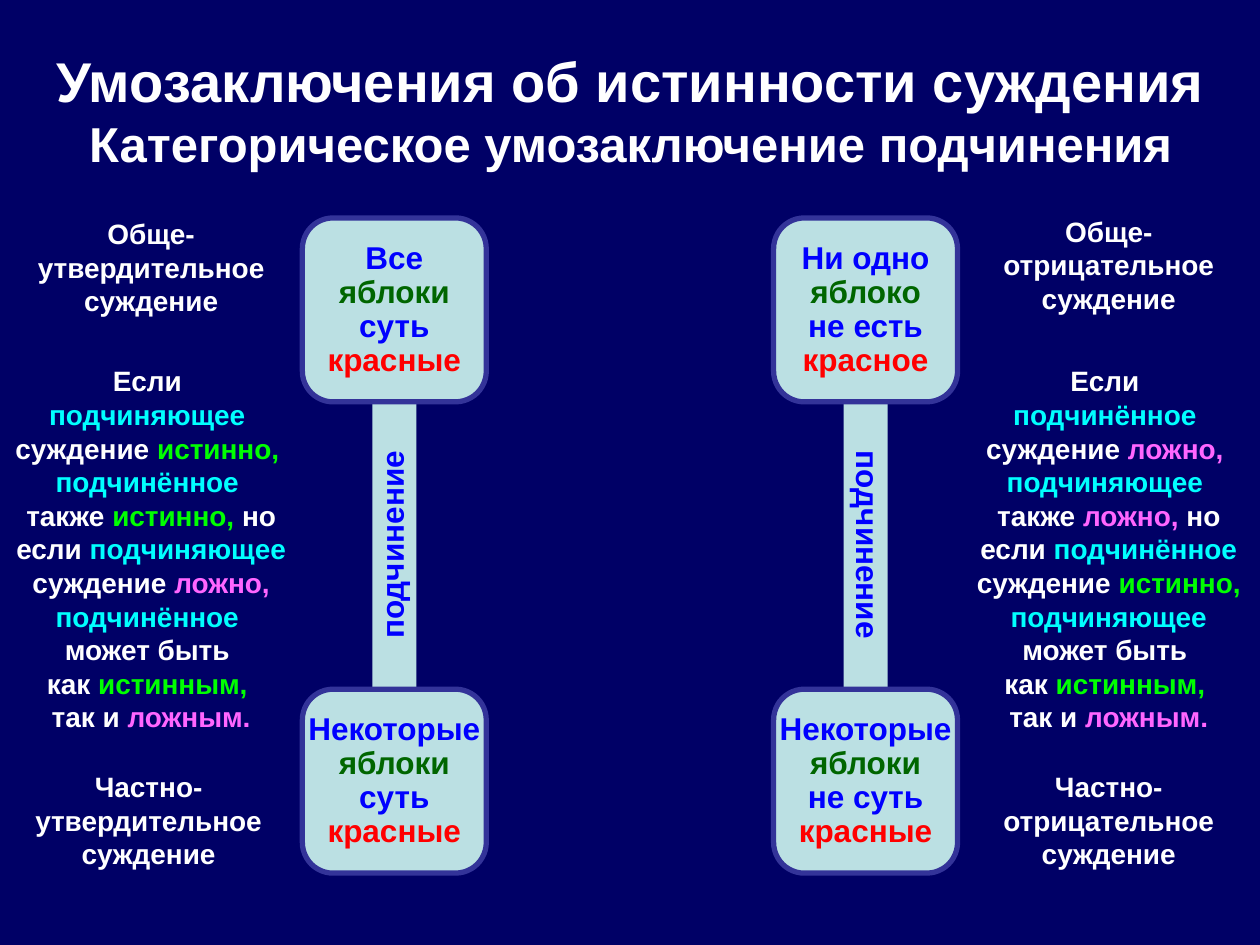
from pptx import Presentation
from pptx.dml.color import RGBColor
from pptx.enum.shapes import MSO_SHAPE as SHAPE
from pptx.enum.text import MSO_ANCHOR as ANCHOR, PP_ALIGN as ALIGN
from pptx.util import Inches, Pt

COLORS = {
    "navy": "000066", "white": "FFFFFF", "pale": "BBE0E3", "border": "333399",
    "blue": "0000FF", "green": "006600", "red": "FF0000",
    "cyan": "00FFFF", "lime": "00FF00", "pink": "FF66FF",
}
WORD_COLORS = {"подчин": "cyan", "истинн": "lime", "ложн": "pink"}
CARD_COLORS = ["blue", "green", "blue", "red"]
CARD_SIZE = 1.46
CARD_TOPS = [1.73, 5.47]
SIDE_WIDTH = 2.4

SIDES = [
    {
        "card_left": 2.4, "text_left": 0, "rotation": 270,
        "cards": [["Все", "яблоки", "суть", "красные"],
                  ["Некоторые", "яблоки", "суть", "красные"]],
        "labels": [["Обще-", "утвердительное", "суждение"],
                   ["Частно-", "утвердительное", "суждение"]],
        "label_widths": [2.4, 2.36],
        "label_anchors": [ANCHOR.MIDDLE, ANCHOR.TOP],
        "rule": ["Если ", "подчиняющее ", "суждение истинно, ", "подчинённое ",
                 "также истинно, но если подчиняющее суждение ложно, подчинённое ",
                 "может быть ", "как истинным, ", "так и ложным."],
    },
    {
        "card_left": 6.14, "text_left": 7.6, "rotation": 90,
        "cards": [["Ни одно", "яблоко", "не есть", "красное"],
                  ["Некоторые", "яблоки", "не суть", "красные"]],
        "labels": [["Обще-", "отрицательное", "суждение"],
                   ["Частно-", "отрицательное", "суждение"]],
        "label_widths": [2.4, 2.4],
        "label_anchors": [ANCHOR.TOP, ANCHOR.TOP],
        "rule": ["Если ", "подчинённое ", "суждение ложно, ", "подчиняющее ",
                 "также ложно, но если подчинённое суждение истинно, подчиняющее может быть ",
                 "как истинным, ", "так и ложным."],
    },
]


def rgb(name):
    return RGBColor.from_string(COLORS[name])


def write(shape, lines, size, anchor=ANCHOR.MIDDLE, wrap=False, spacing=None):
    frame = shape.text_frame
    frame.word_wrap = wrap
    frame.vertical_anchor = anchor
    para = frame.paragraphs[0]
    para.alignment = ALIGN.CENTER
    para.line_spacing = spacing
    para.font.name = "Arial"
    para.font.size = Pt(size)
    para.font.bold = True
    for number, line in enumerate(lines):
        if number:
            para.add_line_break()
        for text, color in line:
            span = para.add_run()
            span.text = text
            span.font.color.rgb = rgb(color)


deck = Presentation()
deck.slide_width, deck.slide_height = Inches(10), Inches(7.5)
page = deck.slides.add_slide(deck.slide_layouts[5])
page.background.fill.solid()
page.background.fill.fore_color.rgb = rgb("navy")

title = page.shapes.title
title.left, title.top = Inches(0.11), Inches(0.3)
title.width, title.height = Inches(9.79), Inches(1.14)
write(title, [[("Умозаключения об истинности суждения ", "white"),
               ("Категорическое умозаключение подчинения", "white")]], 32, wrap=True)
title.text_frame.paragraphs[0].runs[1].font.size = Pt(28)

for side in SIDES:
    center = side["card_left"] + CARD_SIZE / 2
    band = page.shapes.add_shape(SHAPE.RECTANGLE, Inches(center - 1.38), Inches(4.15),
                                 Inches(2.76), Inches(0.35))
    band.rotation = side["rotation"]
    band.shadow.inherit = False
    band.fill.solid()
    band.fill.fore_color.rgb = rgb("pale")
    band.line.fill.background()
    band.text_frame.margin_top = 0
    write(band, [[("подчинение", "blue")]], 18)

    for top, words in zip(CARD_TOPS, side["cards"]):
        card = page.shapes.add_shape(SHAPE.ROUNDED_RECTANGLE, Inches(side["card_left"]),
                                     Inches(top), Inches(CARD_SIZE), Inches(CARD_SIZE))
        card.shadow.inherit = False
        card.fill.solid()
        card.fill.fore_color.rgb = rgb("pale")
        card.line.color.rgb = rgb("border")
        card.line.width = Pt(3)
        write(card, [[pair] for pair in zip(words, CARD_COLORS)], 18, spacing=0.9)

    left = Inches(side["text_left"])
    for top, words, width, anchor in zip([1.65, 6.06], side["labels"],
                                         side["label_widths"], side["label_anchors"]):
        label = page.shapes.add_textbox(left, Inches(top), Inches(width), Inches(0.94))
        write(label, [[(word, "white")] for word in words], 16, anchor)

    lines = []
    for line in side["rule"]:
        words = line.replace(" ", " |").split("|")
        lines.append([
            (word, next((color for stem, color in WORD_COLORS.items()
                         if word.startswith(stem)), "white"))
            for word in words if word
        ])
    rule = page.shapes.add_textbox(left, Inches(2.8), Inches(SIDE_WIDTH), Inches(3.11))
    write(rule, lines, 16, wrap=True)

deck.save("out.pptx")
